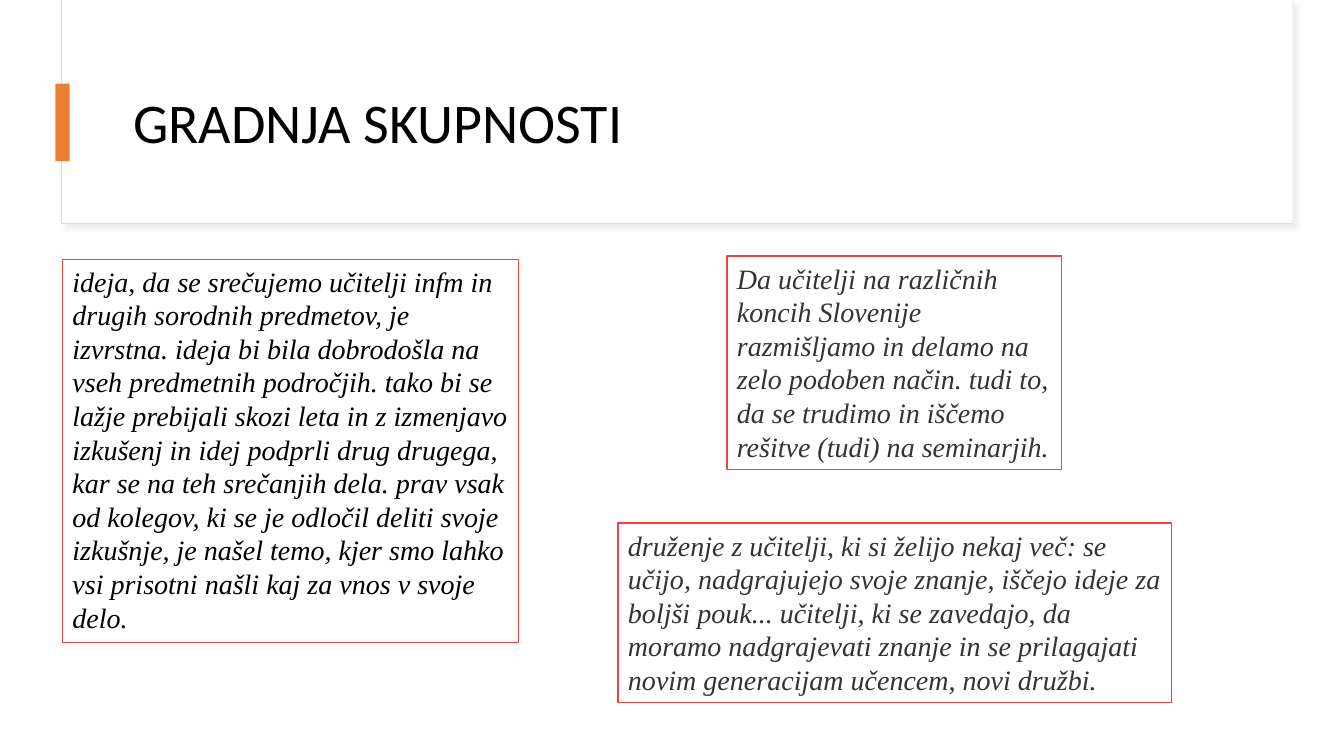
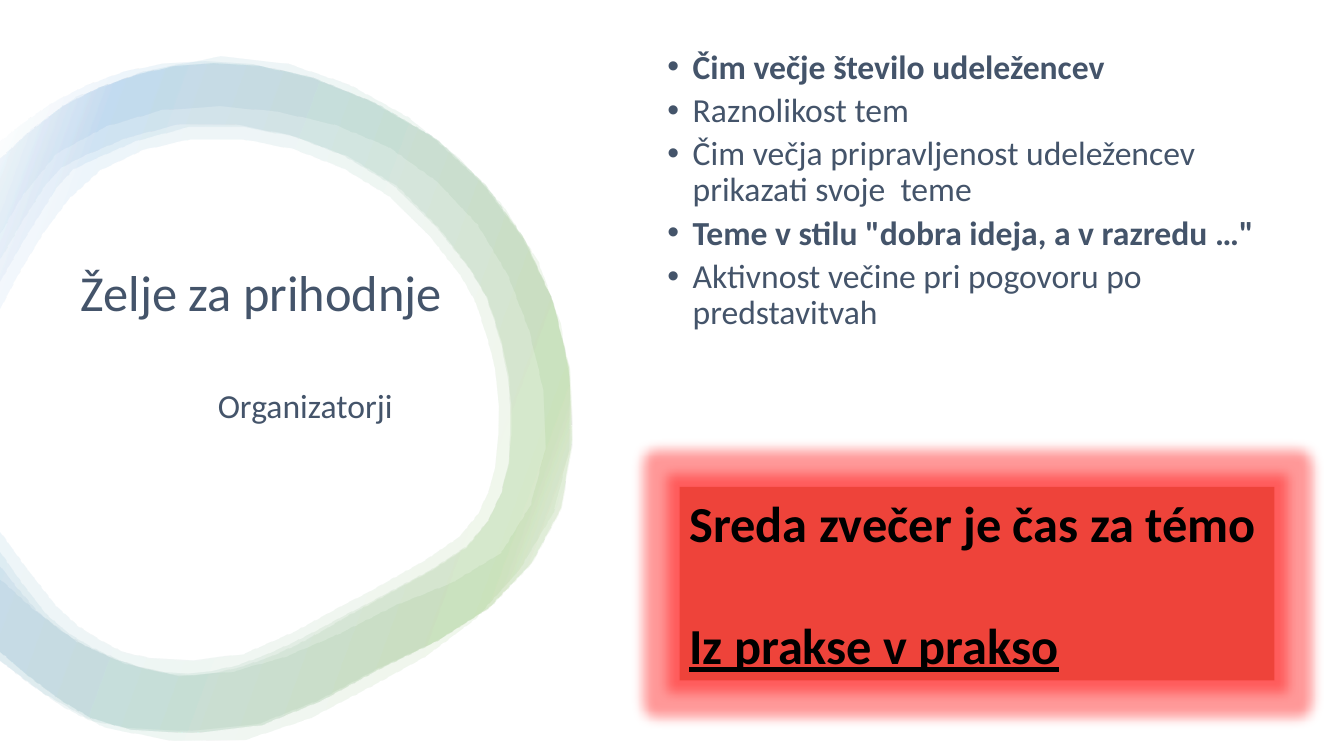
"""Build two slides: opinions about a teaching community and wishes for the future."""
from lxml import etree
from pptx import Presentation
from pptx.dml.color import RGBColor
from pptx.enum.shapes import MSO_SHAPE
from pptx.enum.text import MSO_ANCHOR, MSO_AUTO_SIZE, PP_ALIGN
from pptx.oxml import parse_xml
from pptx.oxml.ns import nsdecls, qn
from pptx.util import Pt

SCALE = 9144
RECTANGLE = MSO_SHAPE.RECTANGLE
TOP, MIDDLE = MSO_ANCHOR.TOP, MSO_ANCHOR.MIDDLE
LEFT = PP_ALIGN.LEFT
NO_AUTOFIT = MSO_AUTO_SIZE.NONE

WHITE, BLACK, CHARCOAL, SLATE = "FFFFFF", "000000", "333333", "44546A"
RED, ORANGE, PALE_GRAY = "EE433A", "ED7D31", "DEDEDE"
GREEN, BLUE = "70AD47", "5B9BD5"
SANS, SERIF = "Calibri", "Times New Roman"


def add_box(slide, frame, fill=None, line=None, line_width=0.75):
    """Add a rectangle without a shadow, placed by a frame in px."""
    box = slide.shapes.add_shape(RECTANGLE, *[length * SCALE for length in frame])
    box.shadow.inherit = False
    if fill:
        box.fill.solid()
        box.fill.fore_color.rgb = RGBColor.from_string(fill)
    else:
        box.fill.background()
    if line:
        box.line.color.rgb = RGBColor.from_string(line)
        box.line.width = Pt(line_width)
    else:
        box.line.fill.background()
    return box


def write_text(shape, lines, font, anchor, spacing=1.0, before=0):
    """Write one paragraph for each (text, size, colour) line."""
    frame = shape.text_frame
    frame.text = "\n".join(text for text, size, colour in lines)
    frame.word_wrap = True
    frame.auto_size = NO_AUTOFIT
    frame.vertical_anchor = anchor
    for paragraph, (text, size, colour) in zip(frame.paragraphs, lines):
        paragraph.alignment = LEFT
        paragraph.line_spacing = spacing
        paragraph.space_before = Pt(before)
        for run in paragraph.runs:
            run.font.name = font
            run.font.size = Pt(size)
            run.font.color.rgb = RGBColor.from_string(colour)
    return frame.paragraphs


presentation = Presentation()
presentation.slide_width = 1333 * SCALE
presentation.slide_height = 750 * SCALE

title_specs = [
    (5, (122, 60, 1112, 129), [("GRADNJA SKUPNOSTI", 40, BLACK)]),
    (1, (70, 136, 422, 416),
     [("Želje za prihodnje", 36, SLATE), ("Organizatorji", 24, SLATE)]),
]
slides = []
for layout_index, frame, lines in title_specs:
    slide = presentation.slides.add_slide(presentation.slide_layouts[layout_index])
    title = slide.shapes.title
    title.left, title.top, title.width, title.height = [length * SCALE for length in frame]
    write_text(title, lines, SANS, MIDDLE, 0.9)
    slides.append(slide)
community, wishes = slides

header = add_box(community, (61, 1, 1221, 221), WHITE, PALE_GRAY)
effects = header.element.spPr.find(qn("a:effectLst"))
effects.append(parse_xml(
    f'<a:outerShdw {nsdecls("a")} blurRad="50800" dist="38100" dir="2700000" algn="tl">'
    '<a:srgbClr val="D9D9D9"><a:alpha val="50000"/></a:srgbClr></a:outerShdw>'))
add_box(community, (62, 0, 1220, 220), WHITE)
add_box(community, (55, 83, 14, 77), ORANGE)
title = community.shapes.title.element
title.getparent().append(title)

opinions = [
    ((62, 257, 452, 380), None, 0.75, BLACK,
     "ideja, da se srečujemo učitelji infm in drugih sorodnih predmetov, je izvrstna. "
     "ideja bi bila dobrodošla na vseh predmetnih področjih. tako bi se lažje prebijali "
     "skozi leta in z izmenjavo izkušenj in idej podprli drug drugega, kar se na teh "
     "srečanjih dela. prav vsak od kolegov, ki se je odločil deliti svoje izkušnje, je "
     "našel temo, kjer smo lahko vsi prisotni našli kaj za vnos v svoje delo."),
    ((613, 519, 549, 178), WHITE, 1, CHARCOAL,
     "druženje z učitelji, ki si želijo nekaj več: se učijo, nadgrajujejo svoje znanje, "
     "iščejo ideje za boljši pouk... učitelji, ki se zavedajo, da moramo nadgrajevati "
     "znanje in se prilagajati novim generacijam učencem, novi družbi."),
    ((721, 254, 332, 212), WHITE, 1, CHARCOAL,
     "Da učitelji na različnih koncih Slovenije razmišljamo in delamo na zelo podoben "
     "način. tudi to, da se trudimo in iščemo rešitve (tudi) na seminarjih."),
]
for frame, fill, line_width, colour, text in opinions:
    box = add_box(community, frame, fill, RED, line_width)
    for paragraph in write_text(box, [(text, 20, colour)], SERIF, TOP):
        paragraph.runs[0].font.italic = True

edge_outer = [
    (0, 158), (75, 96), (218, 56), (346, 84), (455, 157), (533, 259), (565, 383),
    (548, 508), (470, 614), (366, 681), (243, 733), (103, 721), (0, 655)]
edge_inner = [
    (0, 574), (76, 636), (177, 670), (282, 651), (391, 600), (496, 548), (540, 444),
    (524, 328), (473, 223), (385, 146), (275, 111), (161, 109), (56, 152), (0, 232)]
wide_outer = [
    (0, 140), (51, 102), (122, 71), (202, 61), (303, 75), (428, 136), (518, 237),
    (564, 364), (556, 504), (485, 602), (373, 663), (254, 718), (122, 721), (61, 700),
    (0, 655)]
wide_inner = [
    (0, 561), (37, 606), (84, 640), (138, 661), (186, 667), (235, 659), (289, 637),
    (342, 609), (388, 585), (462, 541), (496, 488), (505, 430), (502, 373),
    (489, 318), (465, 267), (389, 184), (287, 134), (178, 123), (82, 155),
    (45, 183), (0, 257)]
core_outer = [
    (0, 157), (62, 105), (135, 74), (211, 63), (310, 77), (433, 138), (520, 237),
    (564, 364), (556, 504), (485, 602), (376, 663), (258, 719), (129, 723), (60, 694),
    (0, 646)]
thick_inner = [
    (0, 527), (55, 600), (99, 634), (148, 652), (241, 648), (339, 600),
    (386, 575), (455, 532), (485, 485), (494, 430), (492, 375), (479, 323),
    (457, 274), (386, 195), (291, 148), (189, 138), (99, 169), (42, 232), (0, 306)]
thin_inner = [
    (0, 547), (46, 609), (92, 642), (145, 663), (192, 669), (241, 660), (294, 639),
    (345, 610), (391, 585), (463, 542), (497, 488), (507, 430), (504, 373),
    (491, 319), (467, 268), (394, 185), (294, 136), (187, 126), (93, 158),
    (56, 186), (0, 279)]
rings = [(edge_outer, edge_inner), (wide_outer, wide_inner),
         (core_outer, thick_inner), (core_outer, thin_inner)]

STEPS = 2
FINENESS = 10
stops = "".join(
    f'<a:gs pos="{position}000"><a:srgbClr val="{colour}"><a:alpha val="10000"/></a:srgbClr></a:gs>'
    for position, colour in [(2, WHITE), (16, GREEN), (85, BLUE), (100, WHITE)])
for ring in rings:
    outline = []
    for curve in ring:
        knots = [curve[0], *curve, curve[-1]]
        for before, start, end, after in zip(knots, knots[1:], knots[2:], knots[3:]):
            for step in range(STEPS):
                t = step / STEPS
                outline.append(tuple(
                    max(0, FINENESS * (b + (c - a) * t / 2 + (2 * a - 5 * b + 4 * c - d) * t**2 / 2
                                       + (3 * b - a - 3 * c + d) * t**3 / 2))
                    for a, b, c, d in zip(before, start, end, after)))
        outline.append(tuple(FINENESS * value for value in curve[-1]))
    builder = wishes.shapes.build_freeform(*outline[0], scale=SCALE / FINENESS)
    builder.add_line_segments(outline[1:], close=True)
    shape = builder.convert_to_shape()
    shape.shadow.inherit = False
    shape.line.fill.background()
    shape.fill.background()
    properties = shape.element.spPr
    properties.replace(properties.find(qn("a:noFill")), parse_xml(
        f'<a:gradFill {nsdecls("a")} rotWithShape="1"><a:gsLst>{stops}</a:gsLst>'
        '<a:lin ang="12000000" scaled="0"/></a:gradFill>'))

title = wishes.shapes.title
title.element.getparent().append(title.element)
organizers = title.text_frame.paragraphs[1]
organizers.space_before = Pt(48)
organizers._p.get_or_add_pPr().set("marL", str(136 * SCALE))

wish_list = [
    ("Čim večje število udeležencev", True),
    ("Raznolikost tem", False),
    ("Čim večja pripravljenost udeležencev prikazati svoje  teme", False),
    ('Teme v stilu "dobra ideja, a v razredu …"', True),
    ("Aktivnost večine pri pogovoru po predstavitvah", False),
]
body = wishes.placeholders[1]
body.left, body.top, body.width, body.height = [length * SCALE for length in (602, 26, 690, 327)]
paragraphs = write_text(body, [(text, 24, SLATE) for text, bold in wish_list], SANS, MIDDLE, 0.9, 5)
for paragraph, (text, bold) in zip(paragraphs, wish_list):
    paragraph.level = 1
    paragraph.runs[0].font.bold = bold
    properties = paragraph._p.get_or_add_pPr()
    properties.set("marL", str(75 * SCALE))
    properties.set("indent", str(-25 * SCALE))
    etree.SubElement(properties, qn("a:buFont")).set("typeface", "Arial")
    etree.SubElement(properties, qn("a:buChar")).set("char", "•")

reminder = add_box(wishes, (674, 483, 590, 192), RED)
effects = reminder.element.spPr.find(qn("a:effectLst"))
effects.append(parse_xml(
    f'<a:glow {nsdecls("a")} rad="228600"><a:srgbClr val="FF0000">'
    '<a:alpha val="40000"/></a:srgbClr></a:glow>'))
reminder_lines = [("Sreda zvečer je čas za témo", 36, BLACK), ("Iz prakse v prakso", 36, BLACK)]
paragraphs = write_text(reminder, reminder_lines, SANS, TOP)
for paragraph in paragraphs:
    paragraph.runs[0].font.bold = True
paragraphs[1].space_before = Pt(44)
paragraphs[1].runs[0].font.underline = True

presentation.save("out.pptx")
